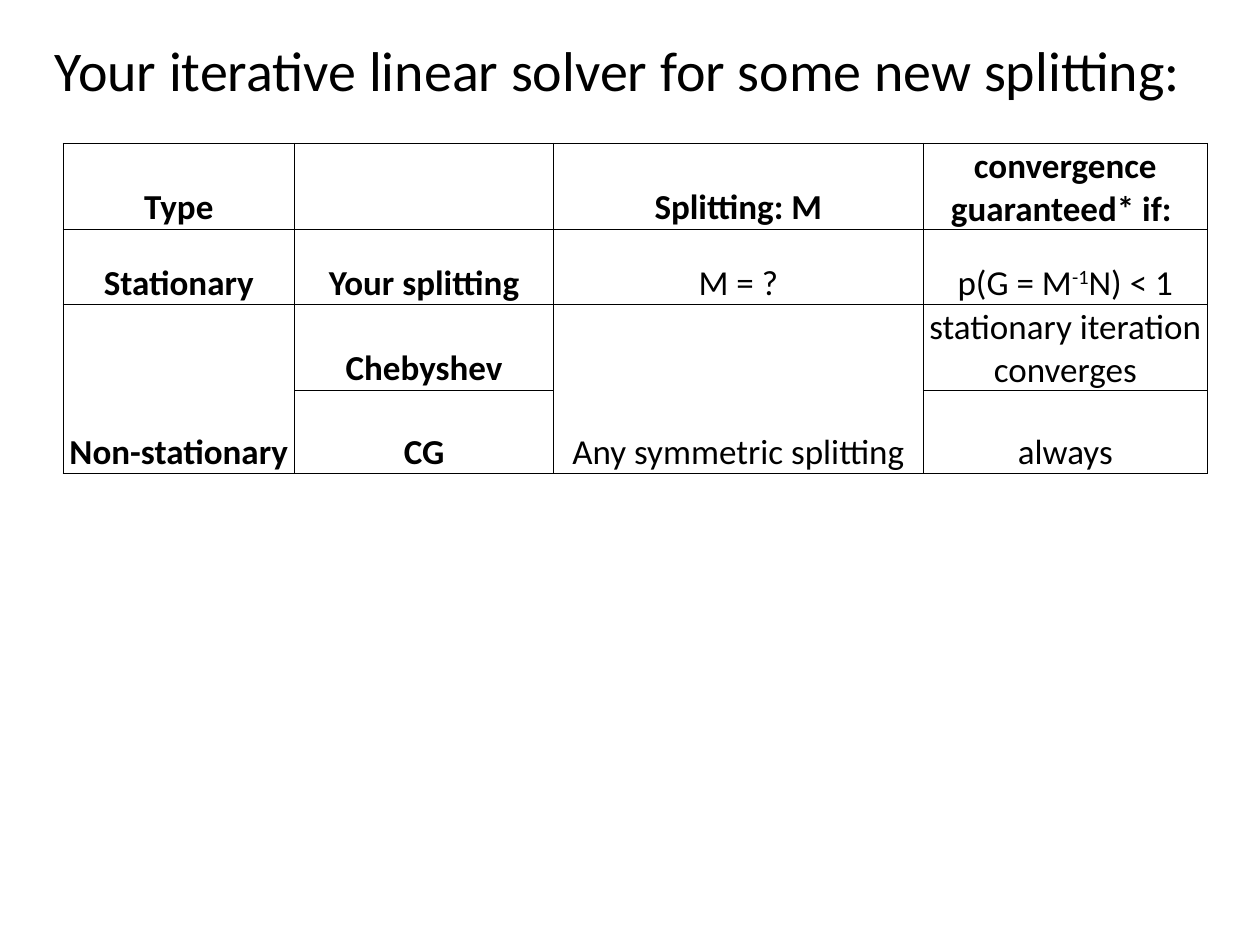
from lxml.etree import SubElement
from pptx import Presentation
from pptx.dml.color import RGBColor
from pptx.enum.text import MSO_ANCHOR, PP_ALIGN
from pptx.oxml.ns import qn
from pptx.util import Cm, Pt

# Content: a cell is a list of (text, format) runs
TITLE = "Your iterative linear solver for some new splitting: "
BOLD, PLAIN = {"bold": True}, {"bold": False}
SUPERSCRIPT = {"bold": False, "baseline": 30000}
ROWS = [
    [[("Type", BOLD)], [], [("Splitting: M", BOLD)],
     [("convergence guaranteed* if: ", BOLD)]],
    [[("Stationary", BOLD)], [("Your splitting", BOLD)], [("M = ?", PLAIN)],
     [("p(G = M", PLAIN), ("-1", SUPERSCRIPT), ("N) < 1", PLAIN)]],
    [[("Non-stationary", BOLD)], [("Chebyshev", BOLD)],
     [("Any symmetric splitting", PLAIN)],
     [("stationary iteration converges", PLAIN)]],
    [[], [("CG", BOLD)], [], [("always", PLAIN)]],
]
MERGED_COLUMNS = (0, 2)  # joined over the last two rows

# Measures and colours
COLUMN_WIDTHS = (4.67, 5.22, 7.45, 5.73)
ROW_HEIGHTS = (1.68, 1.53, 1.68, 1.68)
COLORS = {"text": "000000", "border": "000000", "background": "FFFFFF"}
FONT = "Calibri"
CELL_FORMAT = {
    "vertical_anchor": MSO_ANCHOR.BOTTOM,
    "margin_left": Cm(0.03), "margin_right": Cm(0.03),
    "margin_top": Cm(0.03), "margin_bottom": Cm(0),
}
TITLE_FORMAT = {"word_wrap": True, "vertical_anchor": MSO_ANCHOR.MIDDLE}


def set_format(target, values):
    for name, value in values.items():
        setattr(target, name, value)


def write_runs(paragraph, runs, size):
    paragraph.alignment = PP_ALIGN.CENTER
    for text, style in runs:
        run = paragraph.add_run()
        run.text = text
        set_format(run.font, {"name": FONT, "size": Pt(size),
                              "bold": style["bold"]})
        run.font.color.rgb = RGBColor.from_string(COLORS["text"])
        if "baseline" in style:
            run.font._element.set("baseline", str(style["baseline"]))


def add_borders(cell):
    properties = cell._tc.get_or_add_tcPr()
    for position, side in enumerate(("lnL", "lnR", "lnT", "lnB")):
        line = properties.makeelement(qn(f"a:{side}"), {"w": str(Pt(0.5))})
        fill = SubElement(line, qn("a:solidFill"))
        SubElement(fill, qn("a:srgbClr"), val=COLORS["border"])
        properties.insert(position, line)


presentation = Presentation()
presentation.slide_width, presentation.slide_height = Cm(25.4), Cm(19.05)
slide = presentation.slides.add_slide(presentation.slide_layouts[6])
background = slide.background.fill
background.solid()
background.fore_color.rgb = RGBColor.from_string(COLORS["background"])

# Title
title = slide.shapes.add_textbox(Cm(0.84), Cm(-0.2), Cm(23.5), Cm(3.18))
set_format(title.text_frame, TITLE_FORMAT)
write_runs(title.text_frame.paragraphs[0], [(TITLE, PLAIN)], 32)

# Table
table = slide.shapes.add_table(
    len(ROWS), len(COLUMN_WIDTHS), Cm(1.27), Cm(2.89),
    Cm(sum(COLUMN_WIDTHS)), Cm(sum(ROW_HEIGHTS))).table
set_format(table, {"first_row": False, "horz_banding": False})
for column, width in zip(table.columns, COLUMN_WIDTHS):
    column.width = Cm(width)
for row, height in zip(table.rows, ROW_HEIGHTS):
    row.height = Cm(height)

for row_index, row_content in enumerate(ROWS):
    for column_index, runs in enumerate(row_content):
        cell = table.cell(row_index, column_index)
        set_format(cell, CELL_FORMAT)
        cell.fill.background()
        add_borders(cell)
        write_runs(cell.text_frame.paragraphs[0], runs, 20)

for column_index in MERGED_COLUMNS:
    table.cell(2, column_index).merge(table.cell(3, column_index))

presentation.save("out.pptx")
